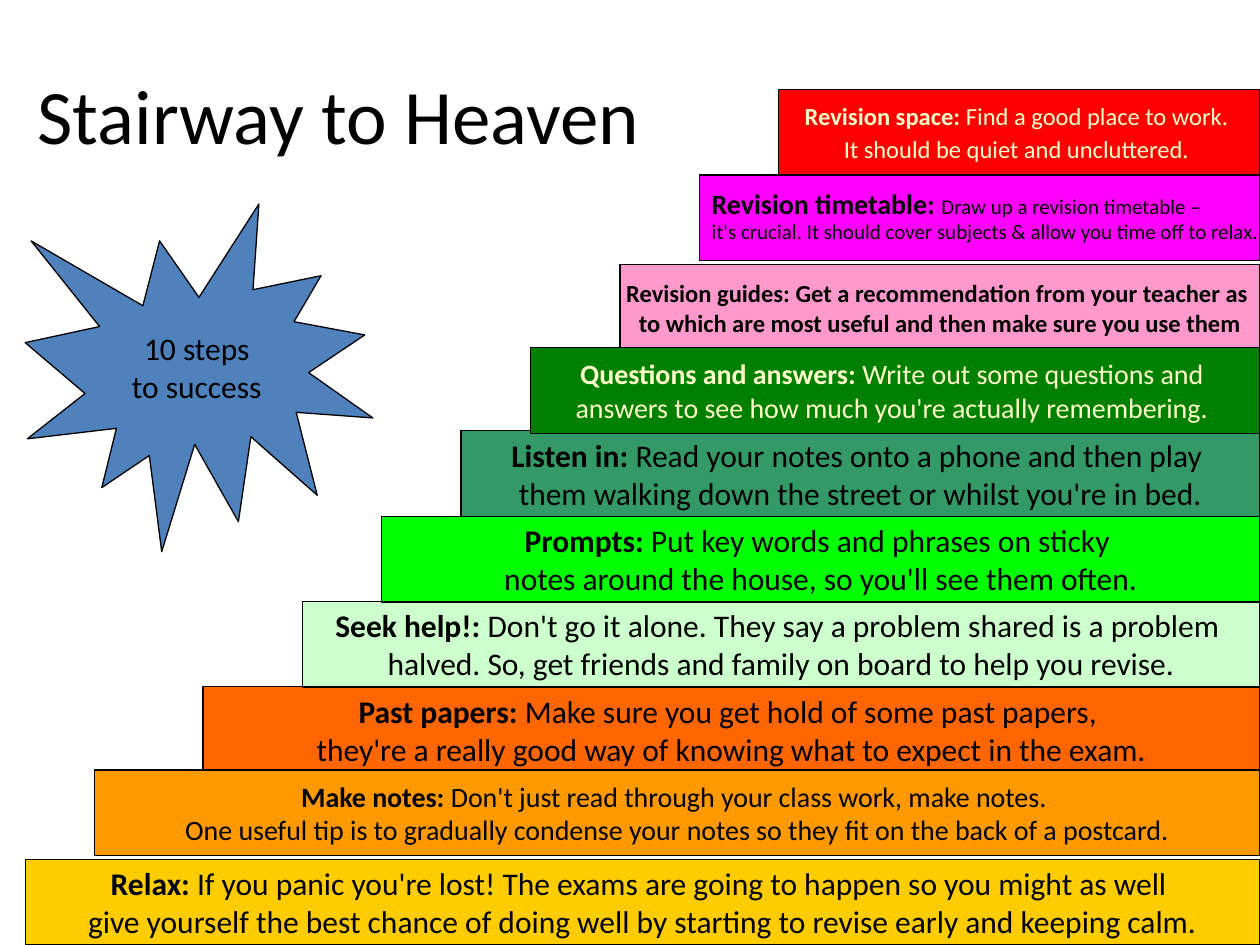
from pptx import Presentation
from pptx import util as u
from pptx.dml.color import RGBColor
from pptx.enum import shapes, text

Pt = u.Pt
FONT = "Calibri"
BLACK = RGBColor(0x00, 0x00, 0x00)
CREAM = RGBColor(0xFF, 0xFF, 0xCC)
GOLD = RGBColor(0xFF, 0xCC, 0x00)
PINK = RGBColor(0xFF, 0x99, 0xCC)
DEEP_ORANGE = RGBColor(0xFF, 0x66, 0x00)
MINT = RGBColor(0xCC, 0xFF, 0xCC)
LIME = RGBColor(0x00, 0xFF, 0x00)
SEA_GREEN = RGBColor(0x33, 0x99, 0x66)
GREEN = RGBColor(0x00, 0x80, 0x00)
MAGENTA = RGBColor(0xFF, 0x00, 0xFF)
RED = RGBColor(0xFF, 0x00, 0x00)
ORANGE = RGBColor(0xFF, 0x99, 0x00)
BLUE = RGBColor(0x4F, 0x81, 0xBD)
SLIDE_W, STEP_H = 720, 49
CENTER, LEFT = text.PP_ALIGN.CENTER, text.PP_ALIGN.LEFT


def add_run(p, words, size, color, bold=False):
    r = p.add_run()
    r.text = words
    r.font.name = FONT
    r.font.size = Pt(size)
    r.font.bold = bold
    r.font.color.rgb = color


def add_box(kind, x, y, w, h, fill):
    sp = s.shapes.add_shape(kind, Pt(x), Pt(y), Pt(w), Pt(h))
    sp.shadow.inherit = False
    sp.fill.solid()
    sp.fill.fore_color.rgb = fill
    sp.line.color.rgb = BLACK
    sp.line.width = Pt(0.75)
    tf = sp.text_frame
    tf.word_wrap = False
    tf.vertical_anchor = text.MSO_ANCHOR.MIDDLE
    tf.add_paragraph()
    for p in tf.paragraphs:
        p.alignment = CENTER
    return tf


prs = Presentation()
prs.slide_width, prs.slide_height = Pt(SLIDE_W), Pt(540)
s = prs.slides.add_slide(prs.slide_layouts[6])

title = s.shapes.add_textbox(Pt(14.4), Pt(20.2), Pt(648), Pt(90))
tf = title.text_frame
tf.word_wrap = True
tf.vertical_anchor = text.MSO_ANCHOR.MIDDLE
add_run(tf.paragraphs[0], "Stairway to Heaven", 44, BLACK)

steps = [
    (14.4, 491, GOLD, BLACK, 18, 18, "Relax:",
     " If you panic you're lost! The exams are going to happen so you might as well ",
     "give yourself the best chance of doing well by starting to revise early and keeping calm."),
    (354.3, 151.2, PINK, BLACK, 14, 14,
     "Revision guides: Get a recommendation from your teacher as ", "",
     "to which are most useful and then make sure you use them"),
    (116, 392.4, DEEP_ORANGE, BLACK, 18, 18, "Past papers:",
     " Make sure you get hold of some past papers, ",
     "they're a really good way of knowing what to expect in the exam."),
    (172.8, 343.6, MINT, BLACK, 18, 18, "Seek help!:",
     " Don't go it alone. They say a problem shared is a problem ",
     "halved. So, get friends and family on board to help you revise."),
    (218.2, 295, LIME, BLACK, 18, 18, "Prompts:",
     " Put key words and phrases on sticky ",
     "notes around the house, so you'll see them often."),
    (263.5, 246.2, SEA_GREEN, BLACK, 18, 18, "Listen in:",
     " Read your notes onto a phone and then play ",
     "them walking down the street or whilst you're in bed."),
    (303, 198.6, GREEN, CREAM, 16, 16, "Questions and answers:",
     " Write out some questions and ",
     "answers to see how much you're actually remembering. "),
    (399.6, 100, MAGENTA, BLACK, 16, 12, "Revision timetable: ",
     "Draw up a revision timetable –",
     "it's crucial. It should cover subjects & allow you time off to relax."),
    (445, 51, RED, CREAM, 14, 14, "Revision space:",
     " Find a good place to work. ",
     "It should be quiet and uncluttered. "),
    (54, 440, ORANGE, BLACK, 16, 16, "Make notes:",
     " Don't just read through your class work, make notes. ",
     "One useful tip is to gradually condense your notes so they fit on the back of a postcard."),
]

for x, y, fill, color, head_size, size, head, rest, second in steps:
    tf = add_box(shapes.MSO_SHAPE.RECTANGLE, x, y, SLIDE_W - x, STEP_H, fill)
    first_p, second_p = tf.paragraphs
    add_run(first_p, head, head_size, color, True)
    if rest:
        add_run(first_p, rest, size, color)
    add_run(second_p, second, size, color, not rest)
    for p in tf.paragraphs:
        if fill in (RED, MAGENTA):
            p.space_before = p.space_after = Pt(1)
        if fill == MAGENTA:
            p.alignment = LEFT
            p.line_spacing = 0.8

tf = add_box(shapes.MSO_SHAPE.EXPLOSION1, 14.4, 116.6, 198.7, 198.7, BLUE)
for p, words in zip(tf.paragraphs, ("10 steps", "to success")):
    add_run(p, words, 18, BLACK)

prs.save("out.pptx")
